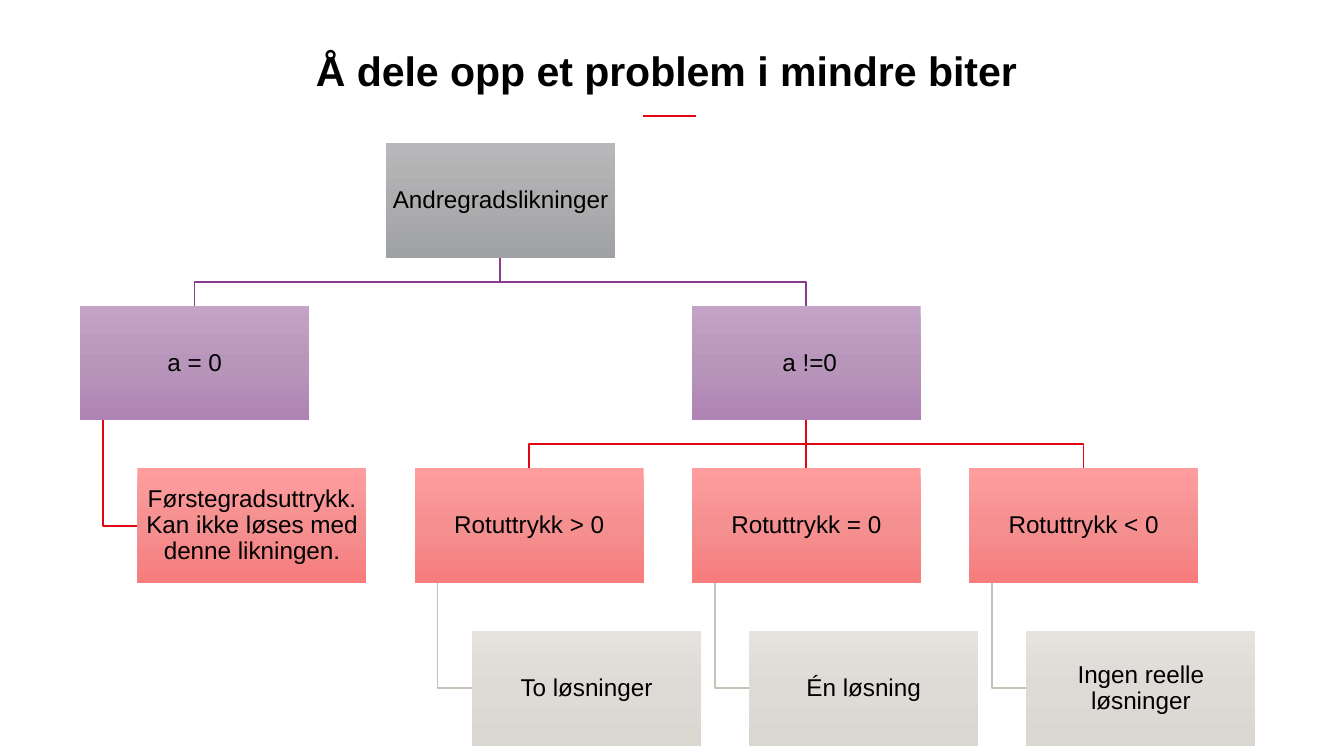
from copy import deepcopy
from dataclasses import dataclass
from typing import Optional

from lxml.etree import SubElement
from pptx import Presentation
from pptx.dml.color import RGBColor
from pptx.enum.shapes import MSO_CONNECTOR as Connector, MSO_SHAPE as Preset
from pptx.enum.text import MSO_ANCHOR as Anchor, PP_ALIGN as Align
from pptx.oxml.ns import qn
from pptx.util import Pt

COLORS = {"text": "000000", "accent": "E30613", "purple": "8A3B8F", "sand": "C7C1B8"}
GRADIENTS = {
    "gray": ("B8B8BA", "ADADAF", "A0A1A4"),
    "purple": ("C3A3C6", "B896BB", "AF83B3"),
    "red": ("FF9D9E", "F59091", "F77C7C"),
    "sand": ("E6E3DF", "DEDAD5", "DAD6D0"),
}
LEVEL_GRADIENTS = ("gray", "purple", "red", "sand")
LEVEL_LINES = ("", "purple", "accent", "sand")

BOX_WIDTH, BOX_HEIGHT = 122.72, 61.36
TREE_TOP, LEVEL_PITCH = 76.7, 87.13
TREE_LEFT, BRANCH_PITCH = 42.9, 148.5
HANG_INDENT, STEM_INSET = 30.68, 12.27
LINE_WIDTH = 1


@dataclass
class Node:
    text: str
    level: int
    left: float
    parent: Optional["Node"] = None
    hanging: bool = False

    @property
    def top(self) -> float:
        return TREE_TOP + self.level * LEVEL_PITCH

    @property
    def bottom(self) -> float:
        return self.top + BOX_HEIGHT

    @property
    def center(self) -> float:
        return self.left + BOX_WIDTH / 2

    @property
    def middle(self) -> float:
        return self.top + BOX_HEIGHT / 2


def hang_below(parent: Node, text: str) -> Node:
    return Node(text, parent.level + 1, parent.left + HANG_INDENT, parent, True)


def build_tree() -> list[Node]:
    first_root_left = TREE_LEFT + HANG_INDENT + BRANCH_PITCH
    nonzero_left = first_root_left + BRANCH_PITCH
    equation = Node("Andregradslikninger", 0, (TREE_LEFT + nonzero_left) / 2)
    zero = Node("a = 0", 1, TREE_LEFT, equation)
    nonzero = Node(" a !=0", 1, nonzero_left, equation)
    linear = hang_below(zero, "Førstegradsuttrykk. Kan ikke løses med denne likningen.")
    nodes = [equation, zero, linear, nonzero]
    cases = ((">", "To løsninger"), ("=", "Én løsning"), ("<", "Ingen reelle løsninger"))
    for index, (sign, answer) in enumerate(cases):
        root = Node(f"Rotuttrykk {sign} 0", 2, first_root_left + index * BRANCH_PITCH, nonzero)
        nodes += [root, hang_below(root, answer)]
    return nodes


def write_text(shape, text: str, *, size: float, bold: bool = False,
               inset: float = 0, spacing: float = 1) -> None:
    frame = shape.text_frame
    frame.word_wrap = True
    frame.vertical_anchor = Anchor.MIDDLE
    frame.margin_left = frame.margin_right = Pt(inset)
    frame.margin_top = frame.margin_bottom = Pt(inset)
    paragraph = frame.paragraphs[0]
    paragraph.alignment = Align.CENTER
    paragraph.line_spacing = spacing
    run = paragraph.add_run()
    run.text = text
    run.font.name = "Arial"
    run.font.size = Pt(size)
    run.font.bold = bold
    run.font.color.rgb = RGBColor.from_string(COLORS["text"])


def style_line(shape, color: str) -> None:
    shape.line.color.rgb = RGBColor.from_string(COLORS[color])
    shape.line.width = Pt(LINE_WIDTH)


def draw_path(slide, points: list[tuple[float, float]], color: str) -> None:
    corners = [(Pt(x), Pt(y)) for x, y in points]
    if len(corners) == 2:
        straight = slide.shapes.add_connector(Connector.STRAIGHT, *corners[0], *corners[1])
        style_line(straight, color)
        SubElement(straight._element.spPr, qn("a:effectLst"))
        return
    builder = slide.shapes.build_freeform(*corners[0], scale=1.0)
    builder.add_line_segments(corners[1:], close=False)
    elbow = builder.convert_to_shape()
    elbow.shadow.inherit = False
    elbow.fill.background()
    style_line(elbow, color)


def draw_branch(slide, node: Node) -> None:
    parent = node.parent
    if node.hanging:
        stem = parent.left + STEM_INSET
        points = [(stem, parent.bottom), (stem, node.middle), (node.left, node.middle)]
    elif abs(node.center - parent.center) < 0.01:
        points = [(parent.center, parent.bottom), (node.center, node.top)]
    else:
        bend = (parent.bottom + node.top) / 2
        points = [(parent.center, parent.bottom), (parent.center, bend),
                  (node.center, bend), (node.center, node.top)]
    draw_path(slide, points, LEVEL_LINES[node.level])


def fill_gradient(shape, colors: tuple[str, ...]) -> None:
    shape.fill.gradient()
    shape.fill.gradient_angle = 270
    stop_list = shape._element.spPr.find(".//" + qn("a:gsLst"))
    stop_list.append(deepcopy(stop_list[0]))
    for index, (stop, color) in enumerate(zip(shape.fill.gradient_stops, colors)):
        stop.position = index / (len(colors) - 1)
        stop.color.rgb = RGBColor.from_string(color)


def draw_box(slide, node: Node) -> None:
    box = slide.shapes.add_shape(Preset.RECTANGLE, Pt(node.left), Pt(node.top),
                                 Pt(BOX_WIDTH), Pt(BOX_HEIGHT))
    box.shadow.inherit = False
    box.line.fill.background()
    fill_gradient(box, GRADIENTS[LEVEL_GRADIENTS[node.level]])
    write_text(box, node.text, size=13, inset=0.65, spacing=0.9)


def main() -> None:
    presentation = Presentation()
    presentation.slide_width, presentation.slide_height = Pt(720), Pt(405)
    slide = presentation.slides.add_slide(presentation.slide_layouts[6])

    draw_path(slide, [(344.4, 62.3), (372.8, 62.3)], "accent")
    title = slide.shapes.add_textbox(Pt(45.4), Pt(23.3), Pt(623.5), Pt(28))
    write_text(title, "Å dele opp et problem i mindre biter", size=22, bold=True)

    nodes = build_tree()
    for node in nodes:
        if node.parent:
            draw_branch(slide, node)
    for node in nodes:
        draw_box(slide, node)

    presentation.save("out.pptx")


if __name__ == "__main__":
    main()
